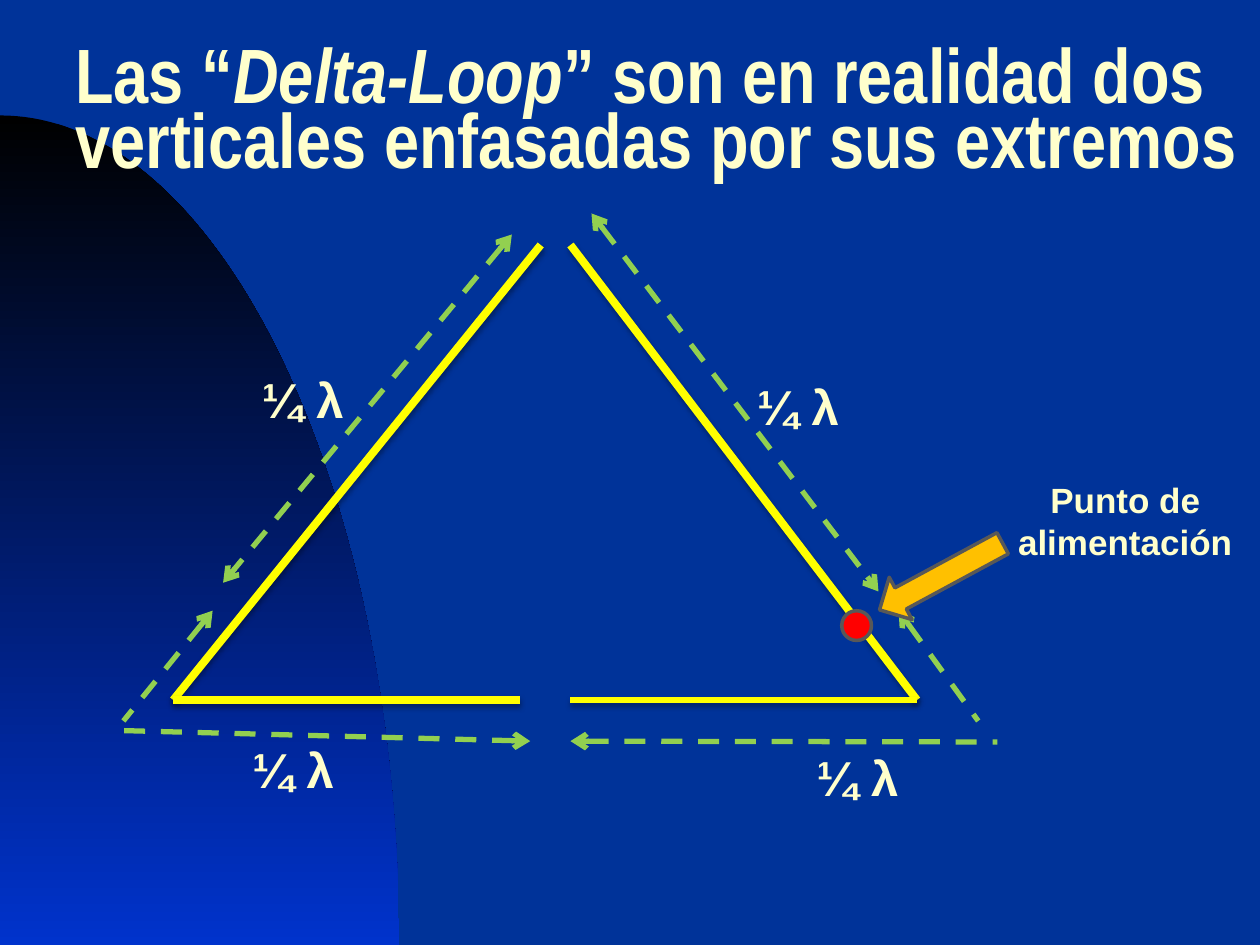
from lxml import etree
from pptx import Presentation
from pptx.dml.color import RGBColor
from pptx.enum.dml import MSO_LINE
from pptx.enum.shapes import MSO_CONNECTOR, MSO_SHAPE
from pptx.enum.text import MSO_ANCHOR, PP_ALIGN
from pptx.oxml import parse_xml
from pptx.oxml.ns import nsdecls, qn
from pptx.util import Pt

STRAIGHT = MSO_CONNECTOR.STRAIGHT
OVAL, DOWN_ARROW = MSO_SHAPE.OVAL, MSO_SHAPE.DOWN_ARROW
DASH = MSO_LINE.DASH
MIDDLE, TOP = MSO_ANCHOR.MIDDLE, MSO_ANCHOR.TOP
LEFT, CENTER = PP_ALIGN.LEFT, PP_ALIGN.CENTER

COLORS = {
    "background": "003399", "curve_top": "000000", "curve_bottom": "0033CC",
    "text": "FFFFCC", "wire": "FFFF00", "measure": "92D050",
    "feed": "FF0000", "pointer": "FFC000", "outline": "585858",
}
WIRES = [
    ((256, 18), (454, 278), 4.5),
    ((239, 18), (29, 278), 4.5),
    ((227, 278), (29, 278), 4.5),
    ((454, 278), (256, 278), 3),
]
MEASURES = [
    ((268, 0), (432, 216), True),
    ((222.5, 12), (57.5, 211), True),
    ((443.5, 227), (489, 290), False),
    ((256, 301.5), (500, 302), False),
    ((51.5, 227), (0.5, 290), False),
    ((233, 301.5), (0.5, 295.5), False),
]
QUARTER_LABELS = [(278.5, 89.5), (312.5, 301.5), (-4.5, 85.5), (-10, 297)]


def rgb(name):
    """Return the named colour."""
    return RGBColor.from_string(COLORS[name])


def add_text(s, box, runs, size, font="Arial", align=CENTER, anchor=TOP, spacing=None):
    """Add a bold wrapped text box from (text, italic) runs."""
    tf = s.shapes.add_textbox(*map(Pt, box)).text_frame
    tf.word_wrap = True
    tf.vertical_anchor = anchor
    p = tf.paragraphs[0]
    p.alignment = align
    p.line_spacing = spacing
    for text, italic in runs:
        r = p.add_run()
        r.text = text
        r.font.name, r.font.size = font, Pt(size)
        r.font.bold, r.font.italic = True, italic
        r.font.color.rgb = rgb("text")


def add_line(s, origin, start, end, color, width):
    """Add a straight line with an empty effect list, relative to an origin."""
    x, y = origin
    points = (x + start[0], y + start[1], x + end[0], y + end[1])
    line = s.shapes.add_connector(STRAIGHT, *map(Pt, points))
    line.line.color.rgb = rgb(color)
    line.line.width = Pt(width)
    effects = etree.SubElement(line._element.spPr, qn("a:effectLst"))
    return line, effects


def style_shape(sp, fill):
    """Give a shape its fill and outline without a shadow."""
    sp.shadow.inherit = False
    sp.fill.solid()
    sp.fill.fore_color.rgb = rgb(fill)
    sp.line.color.rgb = rgb("outline")
    sp.line.width = Pt(2)


def add_backdrop(s, x, y, w, h):
    """Draw the curved gradient area, with its edge as a cubic Bézier."""
    s.background.fill.solid()
    s.background.fill.fore_color.rgb = rgb("background")
    edge = []
    for t in (i / 80 for i in range(1, 81)):
        u = 1 - t
        across = 3 * u * u * t * 0.55 + 3 * u * t * t + t ** 3
        down = 3 * u * t * t * 0.45 + t ** 3
        edge.append((Pt(x + w * across), Pt(y + h * down)))
    builder = s.shapes.build_freeform(Pt(x), Pt(y))
    builder.add_line_segments(edge + [(Pt(x), Pt(y + h))], close=True)
    sp = builder.convert_to_shape()
    sp.shadow.inherit = False
    sp.line.fill.background()
    sp.fill.gradient()
    sp.fill.gradient_angle = 270
    for stop, name, position in zip(sp.fill.gradient_stops, ("curve_top", "curve_bottom"), (0, 1)):
        stop.color.rgb = rgb(name)
        stop.position = position


def add_title(s, box):
    """Add the slide title."""
    runs = [("Las “", False), ("Delta-Loop", True),
            ("” son en realidad dos verticales enfasadas por sus extremos", False)]
    add_text(s, box, runs, 44, "Arial Narrow", LEFT, MIDDLE, 0.7)


def add_antenna(s, x, y):
    """Draw the loop wires with their dashed measures and labels."""
    for start, end, width in WIRES:
        effects = add_line(s, (x, y), start, end, "wire", width)[1]
        effects.append(parse_xml(
            f'<a:outerShdw {nsdecls("a")} blurRad="{Pt(3.1)}" dist="{Pt(1.8)}" dir="5400000" '
            'rotWithShape="0"><a:srgbClr val="000000"><a:alpha val="35000"/></a:srgbClr></a:outerShdw>'))
    for start, end, both in MEASURES:
        line = add_line(s, (x, y), start, end, "measure", 3)[0].line
        line.dash_style = DASH
        ln = line._get_or_add_ln()
        for tag in ("a:headEnd", "a:tailEnd")[:1 + both]:
            etree.SubElement(ln, qn(tag), type="arrow")
    for dx, dy in QUARTER_LABELS:
        add_text(s, (x + dx, y + dy, 215, 41), [("¼ λ", False)], 28)


def add_feed_point(s, x, y):
    """Draw the feed point, its pointer and its caption."""
    style_shape(s.shapes.add_shape(OVAL, Pt(x), Pt(y + 79), Pt(17), Pt(17)), "feed")
    pointer = s.shapes.add_shape(DOWN_ARROW, Pt(x + 43), Pt(y + 19.5), Pt(27.5), Pt(80))
    pointer.rotation = 61.6
    style_shape(pointer, "pointer")
    add_text(s, (x + 54.5, y, 215, 55.5), [("Punto de alimentación", False)], 20)


def main():
    """Build and save the slide."""
    prs = Presentation()
    prs.slide_width, prs.slide_height = Pt(720), Pt(540)
    s = prs.slides.add_slide(prs.slide_layouts[6])
    add_backdrop(s, 0, 66, 228, 474)
    add_title(s, (36, 21.6, 684, 90))
    add_antenna(s, 70, 122)
    add_feed_point(s, 481, 270)
    prs.save("out.pptx")


if __name__ == "__main__":
    main()
